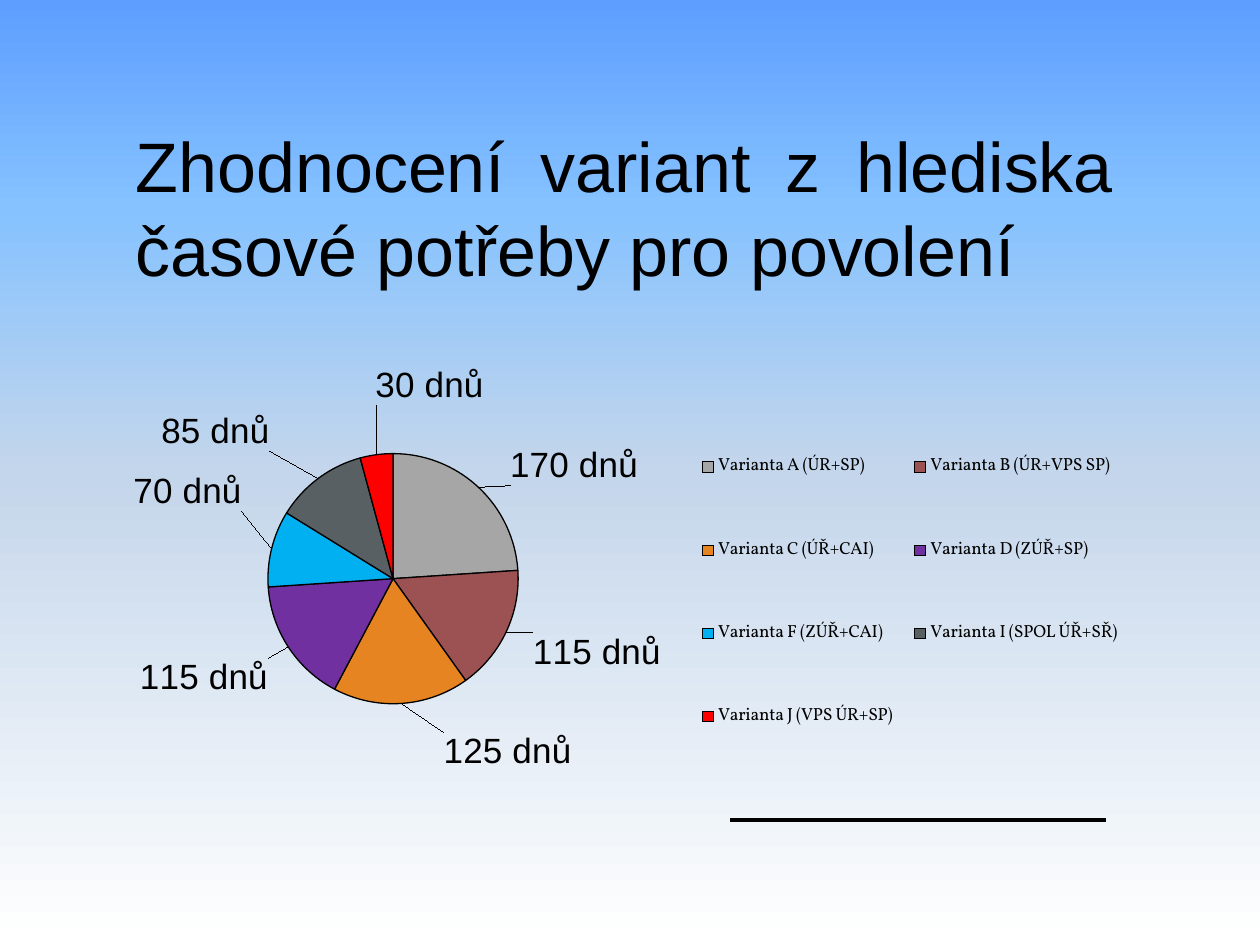
from lxml import etree
from pptx import Presentation
from pptx.chart.data import CategoryChartData
from pptx.dml.color import RGBColor
from pptx.enum.chart import XL_CHART_TYPE as ChartType
from pptx.enum.chart import XL_LABEL_POSITION as LabelPosition
from pptx.enum.chart import XL_LEGEND_POSITION as LegendPosition
from pptx.enum.shapes import MSO_CONNECTOR as Connector
from pptx.enum.text import MSO_AUTO_SIZE as AutoSize
from pptx.enum.text import PP_ALIGN as Align
from pptx.oxml import parse_xml
from pptx.oxml.ns import nsdecls, qn
from pptx.util import Inches, Pt

COLORS = {
    "black": "000000", "grey": "A6A6A6", "brown": "9C5252",
    "orange": "E68422", "purple": "7030A0", "cyan": "00B0F0",
    "slate": "586064", "red": "FF0000",
}
BACKGROUND = [(0, "5E9EFF"), (22, "85C2FF"), (50, "C4D6EB"), (100, "FFFFFF")]

# Variant, days, slice colour, label shift from its default place in inches
VARIANTS = [
    ("Varianta A (ÚR+SP)", 170, "grey", (0.21, 0.03)),
    ("Varianta B (ÚR+VPS SP)", 115, "brown", (0.16, -0.02)),
    ("Varianta C (ÚŘ+CAI)", 125, "orange", (0.84, 0.17)),
    ("Varianta D (ZÚŘ+SP)", 115, "purple", (-0.11, 0.06)),
    ("Varianta F (ZÚŘ+CAI)", 70, "cyan", (-0.18, -0.28)),
    ("Varianta I (SPOL ÚŘ+SŘ)", 85, "slate", (-0.35, -0.17)),
    ("Varianta J (VPS ÚR+SP)", 30, "red", (0.86, -0.33)),
]


def color(name):
    return RGBColor.from_string(COLORS[name])


def set_layout(parent, index, **values):
    """Put a manual chart layout at the given child index."""
    for old in parent.findall(qn("c:layout")):
        parent.remove(old)
    parts = "".join(f'<c:{key} val="{value}"/>' for key, value in values.items())
    parent.insert(index, parse_xml(
        f'<c:layout {nsdecls("c")}><c:manualLayout>{parts}'
        '</c:manualLayout></c:layout>'))


class SlideBuilder:
    title_font = "Arial"
    chart_font = "Vollkorn"

    def __init__(self, slide):
        self.slide = slide

    def background(self, stops):
        marks = "".join(
            f'<a:gs pos="{position * 1000}"><a:srgbClr val="{value}"/></a:gs>'
            for position, value in stops)
        fill = self.slide.background.fill
        fill.gradient()
        gradient = self.slide._element.find(".//" + qn("a:gradFill"))
        gradient.getparent().replace(gradient, parse_xml(
            f'<a:gradFill {nsdecls("a")} rotWithShape="1"><a:gsLst>{marks}</a:gsLst>'
            '<a:lin ang="5400000" scaled="0"/></a:gradFill>'))

    def style(self, font, size, name):
        font.size = Pt(size)
        font.name = name
        font.color.rgb = color("black")

    def text(self, words, left, top, width, height, size):
        box = self.slide.shapes.add_textbox(
            Inches(left), Inches(top), Inches(width), Inches(height))
        frame = box.text_frame
        frame.word_wrap = True
        frame.auto_size = AutoSize.SHAPE_TO_FIT_TEXT
        para = frame.paragraphs[0]
        para.alignment = Align.JUSTIFY
        span = para.add_run()
        span.text = words
        self.style(span.font, size, self.title_font)

    def pie(self, variants, left, top, width, height):
        data = CategoryChartData()
        data.categories = [name for name, *_ in variants]
        data.add_series("Series 1", [days for _, days, *_ in variants])
        chart = self.slide.shapes.add_chart(
            ChartType.PIE, Inches(left), Inches(top),
            Inches(width), Inches(height), data).chart
        chart.has_title = False
        self.style(chart.font, 10, self.chart_font)
        plot = chart.plots[0]
        plot.vary_by_categories = True
        series = plot.series[0]

        # Labels shared settings
        labels = series.data_labels
        labels.show_value = True
        labels.position = LabelPosition.OUTSIDE_END
        self.style(labels.font, 20, self.title_font)

        # Slices with their labels
        for index, (_, days, tint, _) in enumerate(variants):
            point = series.points[index]
            point.format.fill.solid()
            point.format.fill.fore_color.rgb = color(tint)
            point.format.line.color.rgb = color("black")
            point.format.line.width = Pt(0.75)
            label = point.data_label
            span = label.text_frame.paragraphs[0].add_run()
            span.text = f"{days} dnů"
            self.style(span.font, 20, self.title_font)
            label.position = LabelPosition.OUTSIDE_END
        label_nodes = series._element.findall(".//" + qn("c:dLbl"))
        for node, (*_, (right, down)) in zip(label_nodes, variants):
            set_layout(node, 1, x=round(right / width, 4), y=round(down / height, 4))

        # Legend and plot area places
        chart.has_legend = True
        legend = chart.legend
        legend.position = LegendPosition.RIGHT
        legend.include_in_layout = False
        self.style(legend.font, 10, self.chart_font)
        set_layout(legend._element, 1, xMode="edge", yMode="edge",
                   x=0.55, y=0.17, w=0.37, h=0.67)
        area = chart._chartSpace.find(".//" + qn("c:plotArea"))
        set_layout(area, 0, layoutTarget="inner", xMode="edge", yMode="edge",
                   x=0.194, y=0.269, w=0.228, h=0.427)

    def line(self, start, end, width):
        rule = self.slide.shapes.add_connector(
            Connector.STRAIGHT, *map(Inches, start + end))
        rule.line.color.rgb = color("black")
        rule.line.width = Pt(width)
        etree.SubElement(rule._element.spPr, qn("a:effectLst"))


def main():
    deck = Presentation()
    deck.slide_width, deck.slide_height = Inches(10), Inches(7.5)
    page = SlideBuilder(deck.slides.add_slide(deck.slide_layouts[6]))

    page.background(BACKGROUND)
    page.text("Zhodnocení variant z\u00a0hlediska časové potřeby pro povolení".replace("\u00a0", " "),
              0.98, 0.92, 7.95, 1.45, 40)
    page.pie(VARIANTS, 0.16, 2.35, 9.61, 4.65)
    page.line((5.79, 6.51), (8.78, 6.51), 2)
    deck.save("out.pptx")


if __name__ == "__main__":
    main()
